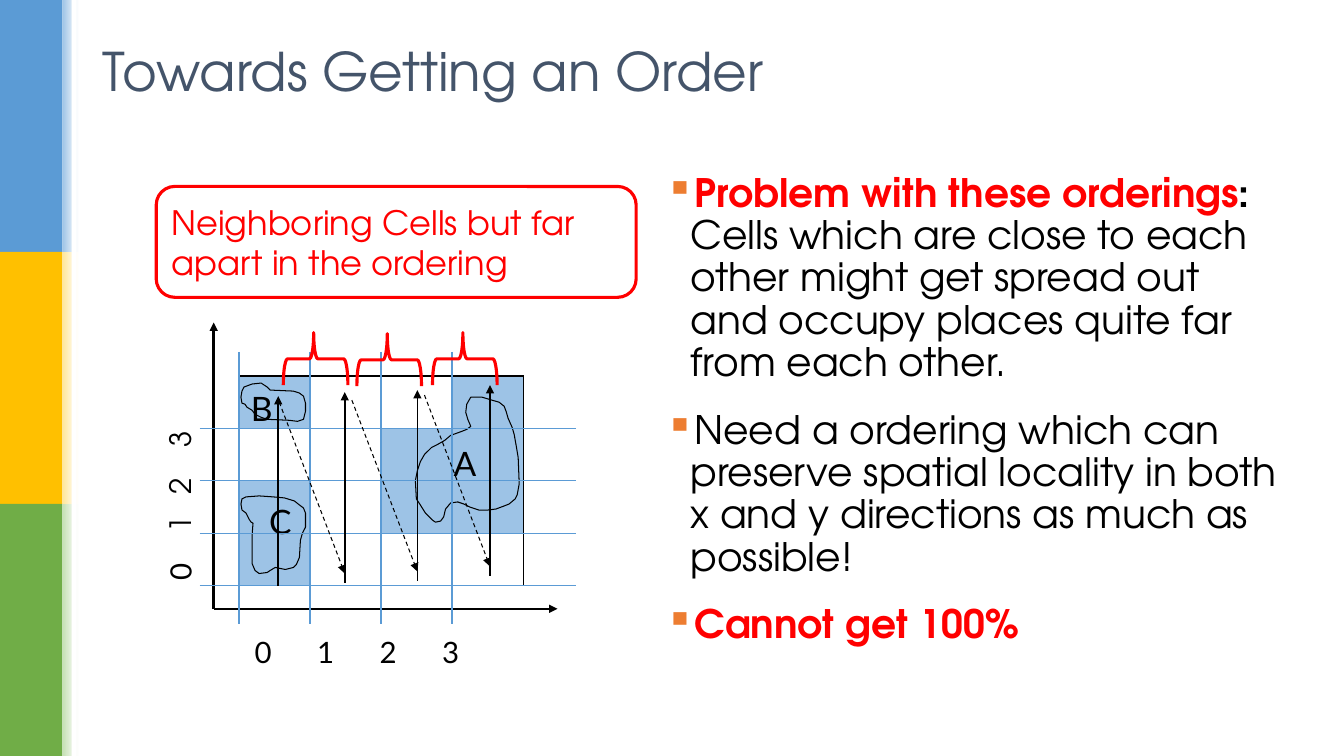
from lxml.etree import SubElement
from pptx import Presentation
from pptx.dml.color import RGBColor
from pptx.enum.dml import MSO_LINE
from pptx.enum.shapes import MSO_CONNECTOR, MSO_SHAPE
from pptx.enum.text import MSO_ANCHOR, PP_ALIGN
from pptx.oxml.ns import qn
from pptx.util import Inches, Pt

BLACK = RGBColor(0x00, 0x00, 0x00)
WHITE = RGBColor(0xFF, 0xFF, 0xFF)
RED = RGBColor(0xFF, 0x00, 0x00)
BLUE = RGBColor(0x5B, 0x9B, 0xD5)
LIGHT_BLUE = RGBColor(0x9D, 0xC3, 0xE6)
YELLOW = RGBColor(0xFF, 0xC0, 0x00)
LIGHT_YELLOW = RGBColor(0xFF, 0xE6, 0x99)
GREEN = RGBColor(0x70, 0xAD, 0x47)
LIGHT_GREEN = RGBColor(0xC5, 0xE0, 0xB4)
SLATE = RGBColor(0x44, 0x54, 0x6A)
HEADING_FONT, LABEL_FONT = "TeX Gyre Adventor", "Lato"

TITLE = "Towards Getting an Order"
CALLOUT = "Neighboring Cells but far apart in the ordering"
BULLETS = [
    [("Problem with these orderings", RED, True), (": ", BLACK, True),
     ("Cells which are close to each other might get spread out and occupy "
      "places quite far from each other.", BLACK, False)],
    [("Need a ordering which can preserve spatial locality in both x and y "
      "directions as much as possible!", BLACK, False)],
    [("Cannot get 100%", RED, True)],
]
SIDE_BANDS = [(BLUE, LIGHT_BLUE), (YELLOW, LIGHT_YELLOW), (GREEN, LIGHT_GREEN)]
OCCUPIED = ["X..X", "..XX", "X.XX", "X..."]
GRID_LEFT, GRID_TOP, CELL_WIDTH, CELL_HEIGHT = 2.37, 3.73, 0.705, 0.52
COLUMN_LABELS = [("0", 2.61), ("1", 3.23), ("2", 3.85), ("3", 4.47)]
ROW_LABELS = [("0", 5.67, LABEL_FONT), ("1", 5.2, HEADING_FONT),
              ("2", 4.82, HEADING_FONT), ("3", 4.36, HEADING_FONT)]
SWEEPS = [(2.76, 5.81, 3.93), (3.42, 5.78, 3.89), (4.14, 5.76, 3.87), (4.86, 5.71, 3.82)]
BRACES = [(2.87, 3.24), (3.6, 3.25), (4.35, 3.24)]
REGIONS = [
    ("A", 0.38, 0.45, [
        (4.21, 4.51), (4.17, 4.58), (4.14, 4.67), (4.12, 4.77), (4.13, 4.95), (4.17, 5.01),
        (4.22, 5.09), (4.29, 5.16), (4.32, 5.18), (4.37, 5.17), (4.4, 5.13), (4.42, 5.05),
        (4.47, 4.99), (4.54, 4.98), (4.6, 5), (4.66, 5.03), (4.75, 5.06), (4.84, 5.06),
        (4.92, 5.05), (5, 5.02), (5.05, 5), (5.11, 4.95), (5.13, 4.91), (5.15, 4.8),
        (5.14, 4.54), (5.12, 4.42), (5.1, 4.31), (5.08, 4.24), (5.04, 4.15), (5.02, 4.08),
        (5, 4.03), (4.95, 3.99), (4.88, 3.97), (4.78, 3.94), (4.72, 3.94), (4.67, 3.94),
        (4.63, 4.01), (4.62, 4.09), (4.64, 4.16), (4.67, 4.23), (4.63, 4.26), (4.58, 4.28),
        (4.47, 4.32), (4.41, 4.37), (4.34, 4.41), (4.28, 4.44), (4.24, 4.48)]),
    ("B", 0.1, 0.05, [
        (2.45, 4.04), (2.5, 4.07), (2.53, 4.11), (2.59, 4.14), (2.65, 4.16), (2.87, 4.17),
        (2.95, 4.18), (3.01, 4.16), (3.03, 4.08), (3.03, 4), (3.01, 3.93), (2.97, 3.9),
        (2.91, 3.88), (2.68, 3.87), (2.65, 3.84), (2.59, 3.8), (2.5, 3.81), (2.42, 3.84),
        (2.4, 3.88), (2.39, 3.94), (2.4, 4), (2.43, 4.01)]),
    ("C", 0.28, 0.05, [
        (2.51, 5.19), (2.5, 5.32), (2.5, 5.59), (2.53, 5.66), (2.57, 5.69), (2.65, 5.68),
        (2.68, 5.66), (2.73, 5.63), (2.83, 5.65), (2.91, 5.63), (2.94, 5.6), (2.97, 5.53),
        (2.98, 5.36), (3, 5.29), (3.03, 5.23), (3.03, 5.09), (3.01, 5.04), (2.97, 5.01),
        (2.92, 4.97), (2.82, 4.94), (2.71, 4.93), (2.57, 4.92), (2.44, 4.93), (2.4, 4.95),
        (2.39, 5), (2.4, 5.06), (2.44, 5.09), (2.47, 5.15), (2.49, 5.18)]),
]

presentation = Presentation()
presentation.slide_width, presentation.slide_height = Inches(13.33), Inches(7.5)
slide = presentation.slides.add_slide(presentation.slide_layouts[6])
shapes = slide.shapes


def add_run(paragraph, text, size, color, font=HEADING_FONT, bold=False):
    run = paragraph.add_run()
    run.text = text
    run.font.size, run.font.name, run.font.bold = Pt(size), font, bold
    run.font.color.rgb = color


def add_preset(kind, left, top, width, height, fill=None, outline=None):
    shape = shapes.add_shape(kind, Inches(left), Inches(top), Inches(width), Inches(height))
    shape.shadow.inherit = False
    if fill is None:
        shape.fill.background()
    else:
        shape.fill.solid()
        shape.fill.fore_color.rgb = fill
    if outline is None:
        shape.line.fill.background()
    else:
        shape.line.color.rgb, shape.line.width = outline, Pt(2.25)
    return shape


def add_text_box(left, top, width, height, anchor=MSO_ANCHOR.TOP):
    frame = shapes.add_textbox(Inches(left), Inches(top), Inches(width), Inches(height)).text_frame
    frame.word_wrap, frame.vertical_anchor = True, anchor
    return frame


def add_line(start, end, color, width, arrow=False, dashed=False):
    connector = shapes.add_connector(MSO_CONNECTOR.STRAIGHT, *map(Inches, start + end))
    connector.line.color.rgb, connector.line.width = color, Pt(width)
    if dashed:
        connector.line.dash_style = MSO_LINE.DASH
    if arrow:
        SubElement(connector.line._get_or_add_ln(), qn("a:tailEnd"), type="triangle")
    SubElement(connector._element.spPr, qn("a:effectLst"))


def add_label(text, center_x, center_y, font, rotation=0):
    shape = shapes.add_textbox(Inches(center_x - 0.2), Inches(center_y - 0.22),
                               Inches(0.4), Inches(0.44))
    shape.rotation = rotation
    paragraph = shape.text_frame.paragraphs[0]
    paragraph.alignment = PP_ALIGN.CENTER
    add_run(paragraph, text, 21, BLACK, font)


def add_cell_borders(cell):
    properties = cell._tc.get_or_add_tcPr()
    for position, side in enumerate(("lnL", "lnR", "lnT", "lnB")):
        border = properties.makeelement(qn("a:" + side), {"w": str(Pt(1))})
        fill = SubElement(border, qn("a:solidFill"))
        SubElement(fill, qn("a:srgbClr"), val=str(BLACK))
        properties.insert(position, border)


for index, (color, tint) in enumerate(SIDE_BANDS):
    add_preset(MSO_SHAPE.RECTANGLE, 0, 2.5 * index, 0.62, 2.5, color)
    fade = add_preset(MSO_SHAPE.RECTANGLE, 0.62, 2.5 * index, 0.16, 2.5, tint)
    fade.fill.gradient()
    fade.fill.gradient_angle = 0
    for stop, stop_color, place in zip(fade.fill.gradient_stops, (tint, WHITE), (0, 1)):
        stop.color.rgb, stop.position = stop_color, place
add_preset(MSO_SHAPE.RECTANGLE, 0.71, 0, 0.05, 7.5, WHITE)

size = len(OCCUPIED)
table = shapes.add_table(size, size, Inches(GRID_LEFT), Inches(GRID_TOP),
                         Inches(size * CELL_WIDTH), Inches(size * CELL_HEIGHT)).table
table.first_row = table.horz_banding = False
for row, marks in enumerate(OCCUPIED):
    for column, mark in enumerate(marks):
        cell = table.cell(row, column)
        if mark == "X":
            cell.fill.solid()
            cell.fill.fore_color.rgb = LIGHT_BLUE
        else:
            cell.fill.background()
        add_cell_borders(cell)

frame = add_text_box(6.5, 1.67, 6.32, 5)
for index, runs in enumerate(BULLETS):
    paragraph = frame.add_paragraph() if index else frame.paragraphs[0]
    properties = paragraph._p.get_or_add_pPr()
    properties.set("marL", str(Inches(0.25)))
    properties.set("indent", str(-Inches(0.25)))
    SubElement(SubElement(properties, qn("a:buClr")), qn("a:srgbClr"), val="ED7D31")
    SubElement(properties, qn("a:buChar"), char="▪")
    paragraph.line_spacing = 0.9
    paragraph.space_before, paragraph.space_after = Pt(6 if index else 0), Pt(12)
    for text, color, bold in runs:
        add_run(paragraph, text, 28, color, bold=bold)

for end in ((5.53, 6.04), (2.12, 3.2)):
    add_line((2.12, 6.04), end, BLACK, 1.75, arrow=True)
for text, x in COLUMN_LABELS:
    add_label(text, x, 6.46, LABEL_FONT)
for text, y, font in ROW_LABELS:
    add_label(text, 1.78, y, font, rotation=270)

for name, margin_left, margin_top, outline in REGIONS:
    builder = shapes.build_freeform(*map(Inches, outline[0]), scale=1.0)
    builder.add_line_segments([(Inches(x), Inches(y)) for x, y in outline[1:]], close=True)
    region = builder.convert_to_shape()
    region.shadow.inherit = False
    region.fill.background()
    region.line.color.rgb, region.line.width = BLACK, Pt(0.75)
    frame = region.text_frame
    frame.word_wrap, frame.vertical_anchor = False, MSO_ANCHOR.TOP
    frame.margin_left, frame.margin_top = Inches(margin_left), Inches(margin_top)
    frame.paragraphs[0].alignment = PP_ALIGN.LEFT
    add_run(frame.paragraphs[0], name, 24, BLACK, LABEL_FONT)

for index in range(size):
    x = GRID_LEFT + index * CELL_WIDTH
    y = GRID_TOP + (index + 1) * CELL_HEIGHT
    add_line((x, 3.49), (x, 6.19), BLUE, 1)
    add_line((1.98, y), (5.71, y), BLUE, 1)

add_run(add_text_box(0.92, 0.15, 11.5, 1.1, MSO_ANCHOR.MIDDLE).paragraphs[0], TITLE, 38, SLATE)

for index, (x, bottom, top) in enumerate(SWEEPS):
    add_line((x, bottom), (x, top), BLACK, 1.25, arrow=True)
    if index:
        add_line((x - 0.65, bottom - 1.79), (x, bottom - 0.09), BLACK, 0.75, arrow=True, dashed=True)
for left, top in BRACES:
    brace = add_preset(MSO_SHAPE.LEFT_BRACE, left, top, 0.52, 0.64, outline=RED)
    brace.rotation = 90
    brace.adjustments[0], brace.adjustments[1] = 0.08, 0.53

callout = add_preset(MSO_SHAPE.ROUNDED_RECTANGLE, 1.55, 1.85, 4.76, 1.1, outline=RED)
callout.text_frame.word_wrap = True
callout.text_frame.vertical_anchor = MSO_ANCHOR.MIDDLE
callout.text_frame.paragraphs[0].alignment = PP_ALIGN.LEFT
add_run(callout.text_frame.paragraphs[0], CALLOUT, 24, RED)

presentation.save("out.pptx")
